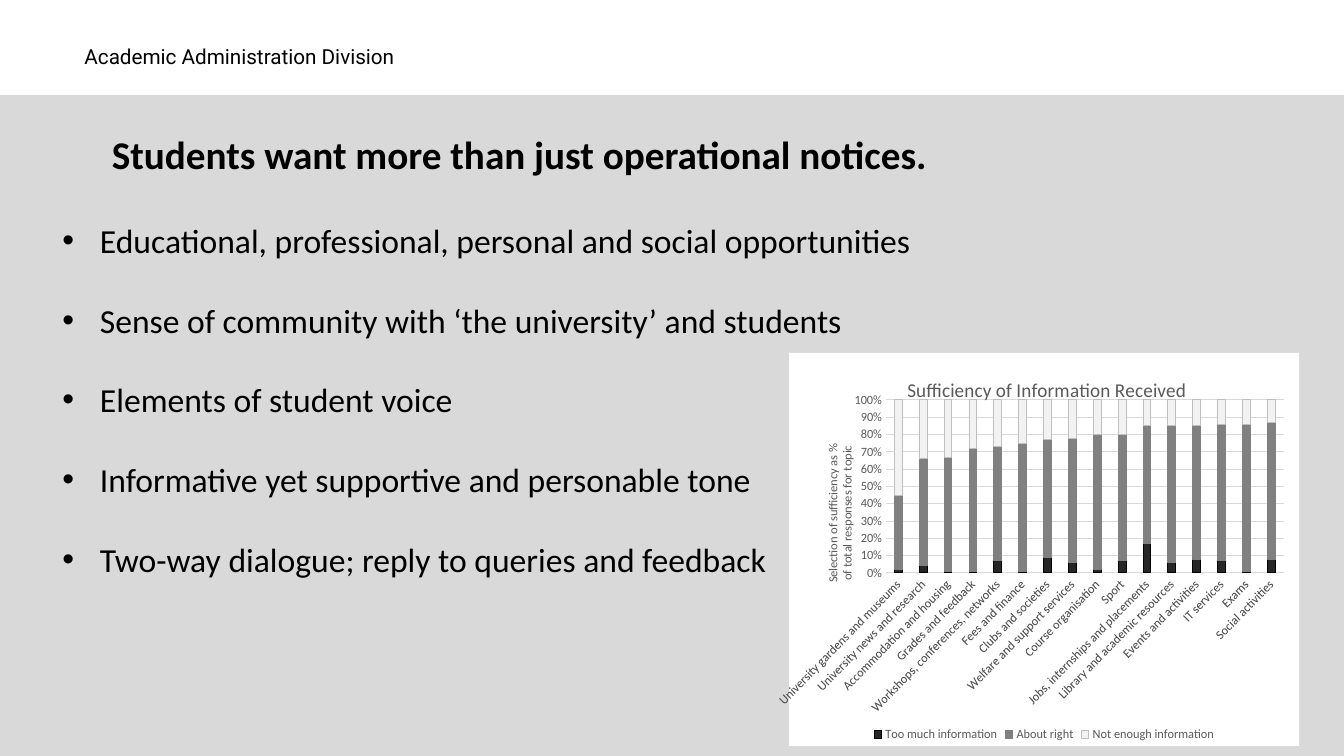
from lxml.etree import SubElement
from pptx import Presentation
from pptx.chart.data import CategoryChartData
from pptx.dml.color import RGBColor
from pptx.enum.chart import XL_CHART_TYPE as ChartType, XL_LEGEND_POSITION as LegendPos
from pptx.enum.chart import XL_TICK_MARK as Tick
from pptx.enum.shapes import MSO_SHAPE as Shape
from pptx.oxml import parse_xml
from pptx.oxml.ns import nsdecls, qn
from pptx.util import Cm, Pt

BLACK = RGBColor(0x00, 0x00, 0x00)
WHITE = RGBColor(0xFF, 0xFF, 0xFF)
PANEL = RGBColor(0xD9, 0xD9, 0xD9)
LABEL = RGBColor(0x59, 0x59, 0x59)
CHARCOAL = RGBColor(0x26, 0x26, 0x26)
GREY = RGBColor(0x80, 0x80, 0x80)
PALE = RGBColor(0xF2, 0xF2, 0xF2)
OUTLINE = RGBColor(0xBF, 0xBF, 0xBF)

POINTS = [
    "Educational, professional, personal and social opportunities",
    "Sense of community with ‘the university’ and students",
    "Elements of student voice",
    "Informative yet supportive and personable tone",
    "Two-way dialogue; reply to queries and feedback",
]
TOPICS = [
    ("University gardens and museums", 2, 43, 55),
    ("University news and research", 4, 62, 34),
    ("Accommodation and housing", 1, 66, 33),
    ("Grades and feedback", 1, 71, 28),
    ("Workshops, conferences, networks", 7, 66, 27),
    ("Fees and finance", 1, 74, 25),
    ("Clubs and societies", 9, 69, 23),
    ("Welfare and support services", 6, 72, 22),
    ("Course organisation", 2, 79, 20),
    ("Sport", 7, 73, 20),
    ("Jobs, internships and placements", 17, 68, 15),
    ("Library and academic resources", 6, 79, 15),
    ("Events and activities", 8, 77, 15),
    ("IT services", 7, 79, 14),
    ("Exams", 1, 85, 14),
    ("Social activities", 8, 79, 13),
]
ANSWERS = [
    ("Too much information", CHARCOAL, BLACK),
    ("About right", GREY, GREY),
    ("Not enough information", PALE, OUTLINE),
]


def set_font(font, size, color=BLACK, name="Calibri", bold=False):
    font.size, font.name, font.bold = Pt(size), name, bold
    font.color.rgb = color


def set_layout(parent, index, inner=False, **place):
    for old in parent.findall(qn("c:layout")):
        parent.remove(old)
    layout = parse_xml(f"<c:layout {nsdecls('c')}><c:manualLayout/></c:layout>")
    if inner:
        SubElement(layout[0], qn("c:layoutTarget")).set("val", "inner")
    for key in ("x", "y"):
        SubElement(layout[0], qn(f"c:{key}Mode")).set("val", "edge")
    for key, value in place.items():
        SubElement(layout[0], qn(f"c:{key}")).set("val", str(value))
    parent.insert(index, layout)


class Deck:
    font = "Calibri"

    def __init__(self, width, height):
        self.prs = Presentation()
        self.prs.slide_width, self.prs.slide_height = Cm(width), Cm(height)
        self.s = self.prs.slides.add_slide(self.prs.slide_layouts[6])

    def panel(self, x, y, w, h, color):
        sp = self.s.shapes.add_shape(Shape.RECTANGLE, Cm(x), Cm(y), Cm(w), Cm(h))
        sp.shadow.inherit = False
        sp.fill.solid()
        sp.fill.fore_color.rgb = color
        sp.line.fill.background()

    def text(self, x, y, w, h, lines, size, bullet=False, gap=0, name=font, bold=False):
        tf = self.s.shapes.add_textbox(Cm(x), Cm(y), Cm(w), Cm(h)).text_frame
        tf.word_wrap = True
        for i, line in enumerate(lines):
            p = tf.paragraphs[0] if i == 0 else tf.add_paragraph()
            if i:
                p.space_before = Pt(gap)
            if bullet:
                pPr = p._p.get_or_add_pPr()
                pPr.set("marL", str(Cm(0.95)))
                pPr.set("indent", str(-Cm(0.95)))
                SubElement(pPr, qn("a:buFont")).set("typeface", "Arial")
                SubElement(pPr, qn("a:buChar")).set("char", "•")
            r = p.add_run()
            r.text = line
            set_font(r.font, size, name=name, bold=bold)

    def chart_title(self, owner, lines, size, x, y):
        tf = owner.text_frame
        for i, line in enumerate(lines):
            p = tf.paragraphs[0] if i == 0 else tf.add_paragraph()
            r = p.add_run()
            r.text = line
            set_font(r.font, size, LABEL)
        set_layout(owner._element, 1, x=x, y=y)

    def chart(self, x, y, w, h, topics, answers):
        data = CategoryChartData(number_format="0")
        data.categories = [topic[0] for topic in topics]
        for i, (name, _, _) in enumerate(answers, 1):
            data.add_series(name, [topic[i] for topic in topics])
        chart = self.s.shapes.add_chart(ChartType.COLUMN_STACKED_100, Cm(x), Cm(y),
                                        Cm(w), Cm(h), data).chart
        set_font(chart.font, 10)
        chart.has_title = True
        self.chart_title(chart.chart_title, ["Sufficiency of Information Received"],
                         14, 0.225, 0.05)
        chart.chart_title.include_in_layout = False

        plot = chart.plots[0]
        plot.gap_width, plot.overlap, plot.vary_by_categories = 219, 100, False
        for series, (_, fill, line) in zip(plot.series, answers):
            series.format.fill.solid()
            series.format.fill.fore_color.rgb = fill
            series.format.line.color.rgb = line
            series.format.line.width = Pt(0.75)

        cat, val = chart.category_axis, chart.value_axis
        for axis in (cat, val):
            axis.major_tick_mark = axis.minor_tick_mark = Tick.NONE
            set_font(axis.tick_labels.font, 9, LABEL)
        val.minimum_scale, val.maximum_scale, val.major_unit = 0, 1, 0.1
        val.tick_labels.number_format = "0%"
        val.tick_labels.number_format_is_linked = False
        val.has_major_gridlines = True
        val.format.line.fill.background()
        for line in (cat.format.line, val.major_gridlines.format.line):
            line.color.rgb, line.width = PANEL, Pt(0.75)
        self.chart_title(val.axis_title, ["Selection of sufficiency as %",
                                          "of total responses for topic"], 9, 0.063, 0.215)

        chart.has_legend = True
        chart.legend.position = LegendPos.BOTTOM
        chart.legend.include_in_layout = False
        set_font(chart.legend.font, 9, LABEL)

        root = chart.element
        for where, degrees in (("c:catAx/c:txPr", -45), ("c:valAx/c:title/c:tx/c:rich", -90)):
            for body in root.xpath(f".//{where}/a:bodyPr"):
                body.set("rot", str(degrees * 60000))
                body.set("vert", "horz")
        set_layout(root.xpath("c:chart/c:plotArea")[0], 0, inner=True,
                   x=0.19, y=0.12, w=0.78, h=0.44)
        root.xpath("c:chart")[0].addnext(parse_xml(
            f"<c:spPr {nsdecls('c', 'a')}><a:solidFill><a:srgbClr val='{WHITE}'/></a:solidFill>"
            "<a:ln><a:noFill/></a:ln></c:spPr>"))


def main():
    deck = Deck(33.87, 19.05)
    deck.text(1.88, 0.99, 19.76, 0.89, ["Academic Administration Division"], 14.8, name="Roboto")
    deck.panel(0, 2.39, 33.87, 16.66, PANEL)
    deck.chart(19.56, 8.89, 13.18, 9.91, TOPICS, ANSWERS)
    deck.text(2.57, 3.15, 23.98, 1.45, ["Students want more than just operational notices."],
              28, bold=True)
    deck.text(1.32, 5.41, 27.61, 9.5, POINTS, 24, bullet=True, gap=28.2)
    deck.prs.save("out.pptx")


if __name__ == "__main__":
    main()
